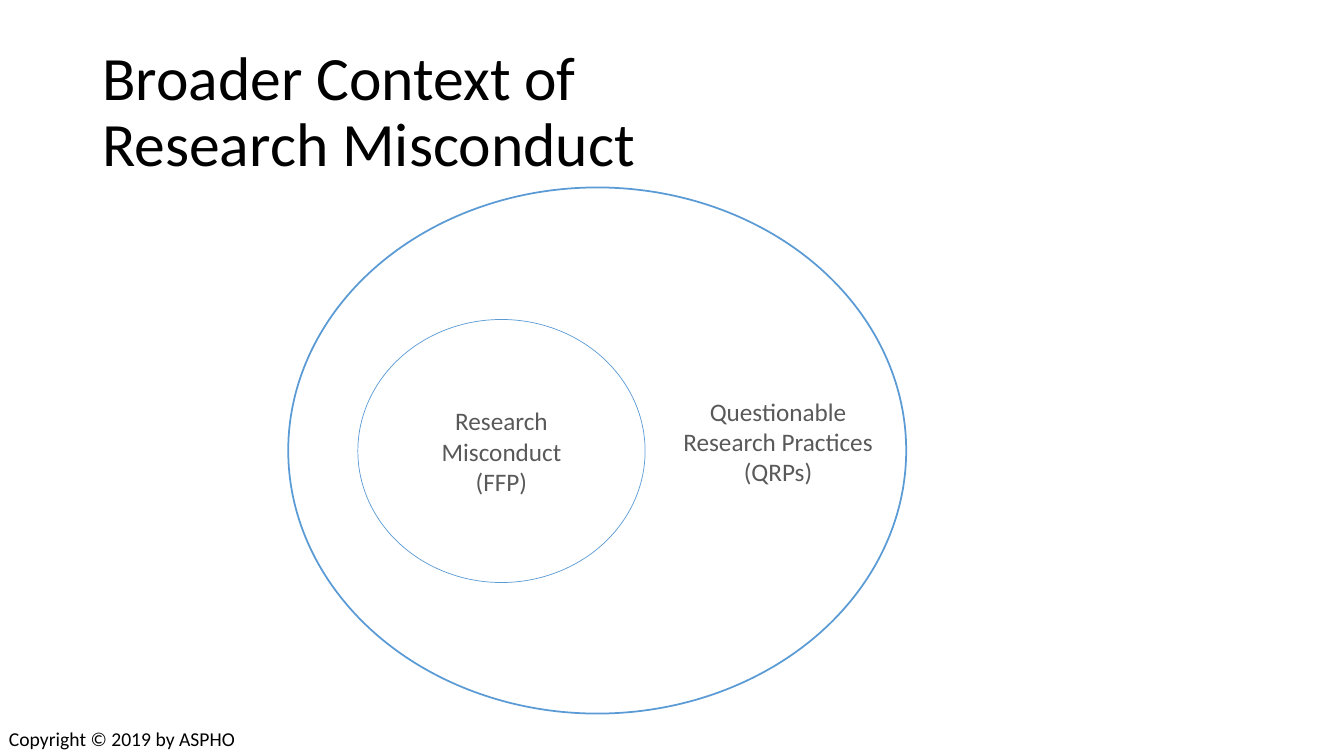
import pptx
import pptx.util
import pptx.dml.color
import pptx.enum.shapes
import pptx.enum.text

Pt = pptx.util.Pt
RGB = pptx.dml.color.RGBColor.from_string
ALIGN = pptx.enum.text.PP_ALIGN
ANCHOR = pptx.enum.text.MSO_ANCHOR
OVAL = pptx.enum.shapes.MSO_SHAPE.OVAL
COLORS = {"ink": "000000", "gray": "595959", "blue": "5B9BD5"}

deck = pptx.Presentation()
deck.slide_width = Pt(960)
deck.slide_height = Pt(540)
slide = deck.slides.add_slide(deck.slide_layouts[6])


def write(text, shape, size=18, color="gray", align=ALIGN.CENTER,
          anchor=ANCHOR.TOP, wrap=True, space=1.0):
    frame = shape.text_frame
    frame.word_wrap = wrap
    frame.vertical_anchor = anchor
    frame.text = text
    for para in frame.paragraphs:
        para.alignment = align
        para.line_spacing = space
        para.font.name = "Calibri"
        para.font.size = Pt(size)
        para.font.color.rgb = RGB(COLORS[color])


def ring(left, top, width, height, weight):
    oval = slide.shapes.add_shape(OVAL, Pt(left), Pt(top), Pt(width), Pt(height))
    oval.shadow.inherit = False
    oval.fill.background()
    oval.line.color.rgb = RGB(COLORS["blue"])
    oval.line.width = Pt(weight)
    return oval


title = slide.shapes.add_textbox(Pt(66), Pt(28.8), Pt(828), Pt(104.4))
write("Broader Context of\vResearch Misconduct", title, size=44, color="ink",
      align=ALIGN.LEFT, anchor=ANCHOR.MIDDLE, space=0.9)

inner = ring(255.6, 228.2, 205.2, 187.9, 0.5)
write("Research Misconduct\n(FFP)", inner, anchor=ANCHOR.MIDDLE)
ring(205.9, 133.9, 441.4, 375.8, 1.25)

label = slide.shapes.add_textbox(Pt(480.2), Pt(279.4), Pt(151.2), Pt(94.3))
write("Questionable\nResearch Practices\n(QRPs)", label, wrap=False)

notice = slide.shapes.add_textbox(Pt(-0.7), Pt(515.5), Pt(178.6), Pt(24.5))
write("Copyright © 2019 by ASPHO", notice, size=14, color="ink", align=ALIGN.LEFT)

deck.save("out.pptx")
